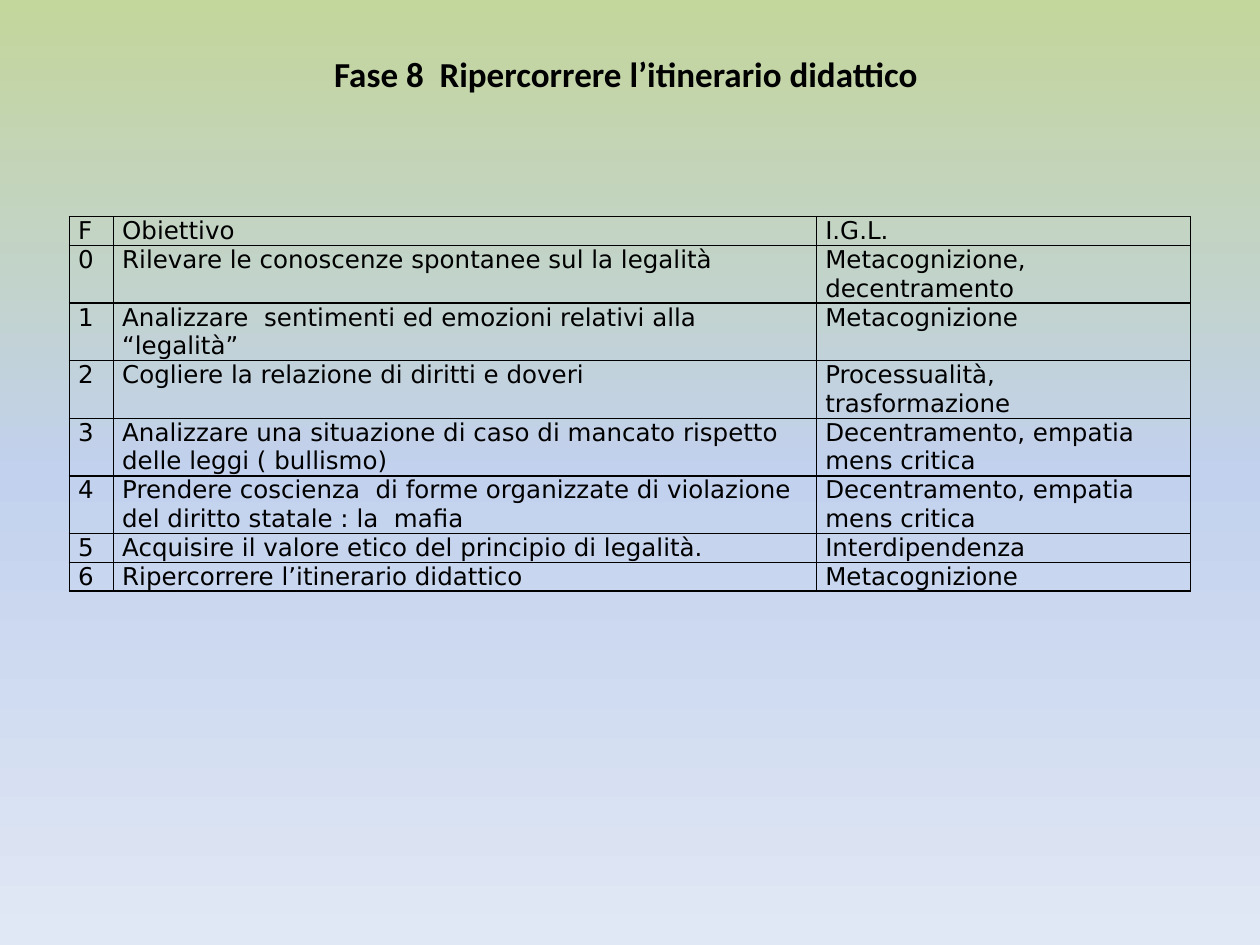
from copy import deepcopy

from lxml.etree import SubElement
from pptx import Presentation
from pptx.dml.color import RGBColor
from pptx.enum.text import MSO_ANCHOR, PP_ALIGN
from pptx.oxml.ns import qn
from pptx.util import Inches, Pt

TITLE = "Fase 8  Ripercorrere l’itinerario didattico "
# Each row: phase, objective, skills, number of text lines
ROWS = [
    ("F", "Obiettivo", "I.G.L.", 1),
    ("0", "Rilevare le conoscenze spontanee sul la legalità",
     "Metacognizione, decentramento", 2),
    ("1", "Analizzare  sentimenti ed emozioni relativi alla “legalità”",
     "Metacognizione", 2),
    ("2", "Cogliere la relazione di diritti e doveri",
     "Processualità, trasformazione", 2),
    ("3", "Analizzare una situazione di caso di mancato rispetto delle leggi ( bullismo)",
     "Decentramento, empatia\nmens critica", 2),
    ("4", "Prendere coscienza  di forme organizzate di violazione del diritto statale : la  mafia",
     "Decentramento, empatia\nmens critica", 2),
    ("5", "Acquisire il valore etico del principio di legalità.", "Interdipendenza", 1),
    ("6", "Ripercorrere l’itinerario didattico", "Metacognizione", 1),
]
COLUMN_WIDTHS = [0.35, 5.58, 2.97]
LINE_HEIGHT = 0.22
COLORS = {"text": "000000", "border": "000000",
          "top": "C3D69B", "middle": "C2D1ED", "bottom": "E1E8F5"}


def set_font(paragraph, name, size, bold=False):
    font = paragraph.font
    font.name, font.size, font.bold = name, Pt(size), bold
    font.color.rgb = RGBColor.from_string(COLORS["text"])


def add_borders(cell):
    properties = cell._tc.get_or_add_tcPr()
    for index, side in enumerate(("lnL", "lnR", "lnT", "lnB")):
        line = properties.makeelement(qn(f"a:{side}"), {"w": str(Pt(1))})
        properties.insert(index, line)
        fill = SubElement(line, qn("a:solidFill"))
        SubElement(fill, qn("a:srgbClr"), val=COLORS["border"])


deck = Presentation()
deck.slide_width, deck.slide_height = Inches(10), Inches(7.5)
page = deck.slides.add_slide(deck.slide_layouts[5])

# Background: three-colour gradient from top to bottom
background = page.background.fill
background.gradient()
background.gradient_angle = 270
stop_list = page.element.find(".//" + qn("a:gsLst"))
stop_list.insert(1, deepcopy(stop_list[0]))
for stop, key, position in zip(background.gradient_stops,
                               ("top", "middle", "bottom"), (0, 0.5, 1)):
    stop.color.rgb = RGBColor.from_string(COLORS[key])
    stop.position = position

# Title
title = page.shapes.title
title.left, title.top = Inches(0.5), Inches(0.3)
title.width, title.height = Inches(9), Inches(0.56)
title.text_frame.text = TITLE
title.text_frame.vertical_anchor = MSO_ANCHOR.MIDDLE
heading = title.text_frame.paragraphs[0]
heading.alignment = PP_ALIGN.CENTER
set_font(heading, "Calibri", 20, bold=True)

# Table of phases
total_lines = sum(row[-1] for row in ROWS)
table = page.shapes.add_table(
    len(ROWS), len(COLUMN_WIDTHS), Inches(0.55), Inches(1.72),
    Inches(sum(COLUMN_WIDTHS)), Inches(total_lines * LINE_HEIGHT)).table
table.first_row = table.horz_banding = False
for column, width in zip(table.columns, COLUMN_WIDTHS):
    column.width = Inches(width)
for row, (*texts, lines) in zip(table.rows, ROWS):
    row.height = Inches(lines * LINE_HEIGHT)
    for cell, text in zip(row.cells, texts):
        cell.text = text
        cell.margin_left = cell.margin_right = Inches(0.07)
        cell.margin_top = cell.margin_bottom = 0
        cell.fill.background()
        add_borders(cell)
        for paragraph in cell.text_frame.paragraphs:
            set_font(paragraph, "DejaVu Sans", 14)

deck.save("out.pptx")
